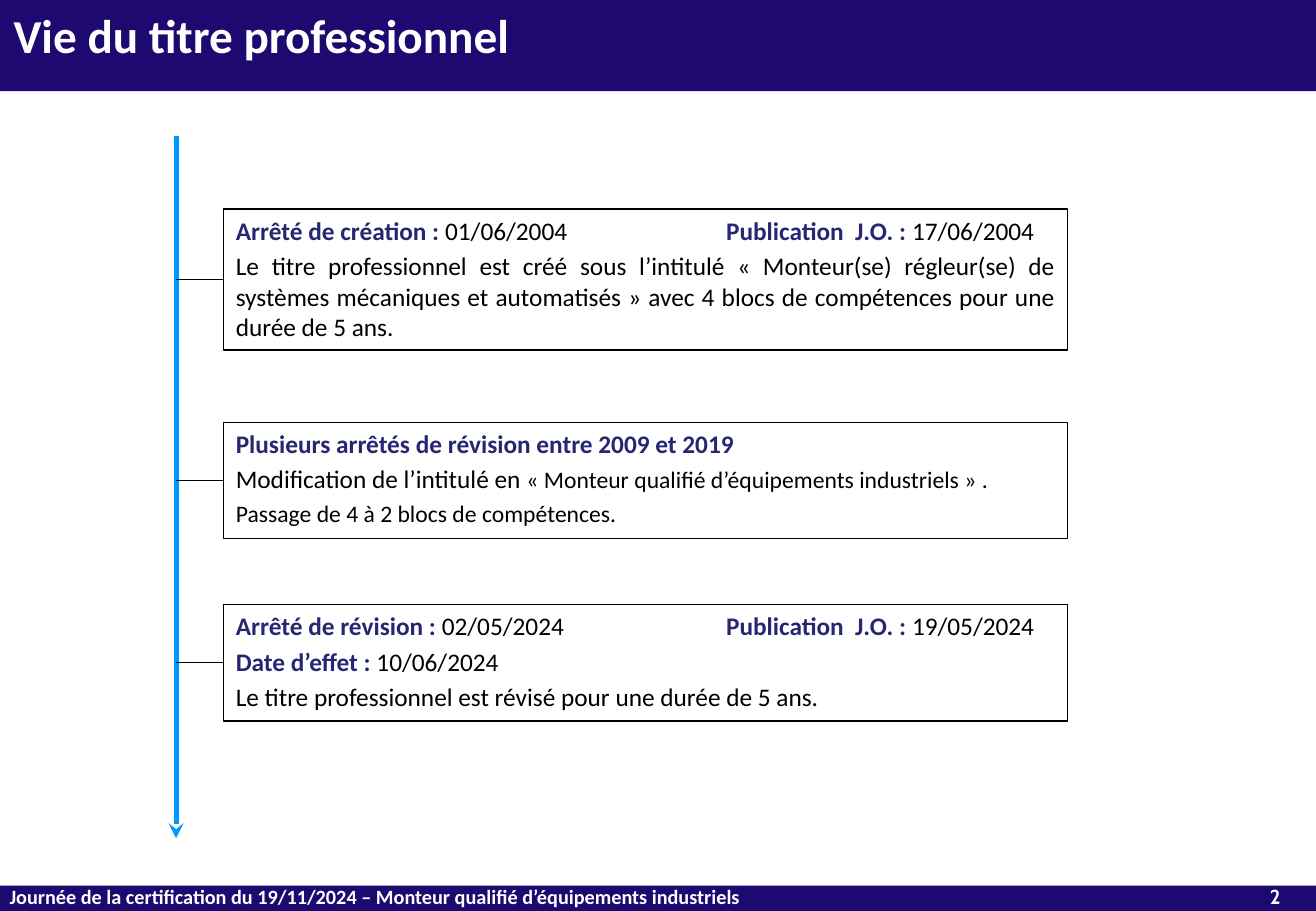
"""Builds the slide that tells the life of a professional title."""
from dataclasses import dataclass

from lxml import etree
from pptx import Presentation
from pptx.dml.color import RGBColor
from pptx.enum.shapes import MSO_CONNECTOR, MSO_SHAPE
from pptx.enum.text import MSO_ANCHOR, PP_ALIGN
from pptx.oxml.ns import qn
from pptx.shapes.autoshape import Shape
from pptx.slide import Slide
from pptx.text.text import TextFrame
from pptx.util import Cm, Pt

RECT = MSO_SHAPE.RECTANGLE
STRAIGHT = MSO_CONNECTOR.STRAIGHT
TOP = MSO_ANCHOR.TOP
LEFT, CENTER, JUSTIFY = PP_ALIGN.LEFT, PP_ALIGN.CENTER, PP_ALIGN.JUSTIFY


@dataclass(frozen=True)
class Theme:
    navy: str = "1D0970"
    label: str = "262673"
    axis: str = "0099FF"
    black: str = "000000"
    white: str = "FFFFFF"
    font: str = "Calibri"
    number: str = "Cabin"
    title: float = 28
    body: float = 15
    small: float = 14
    foot: float = 12


THEME = Theme()


@dataclass(frozen=True)
class Part:
    text: str
    color: str = THEME.black
    bold: bool = False
    size: float = THEME.body


@dataclass(frozen=True)
class Event:
    top: float
    height: float
    lines: list[list[Part]]


WIDTH, HEIGHT = 27.51, 19.05
BAND, FOOT = 1.91, 0.53
AXIS, BOX, SPAN, TAB = 3.68, 4.68, 17.63, 16.69


def label(text: str) -> Part:
    return Part(text, THEME.label, True)


def dates(name: str, signed: str, issued: str) -> list[Part]:
    return [label(f"{name} : "), Part(f"{signed}\t"),
            label("Publication  J.O. : "), Part(issued)]


EVENTS = [
    Event(4.37, 2.95, [
        dates("Arrêté de création", "01/06/2004", "17/06/2004"),
        [Part("Le titre professionnel est créé sous l’intitulé « Monteur(se) régleur(se) de "
              "systèmes mécaniques et automatisés » avec 4 blocs de compétences pour une "
              "durée de 5 ans.")],
    ]),
    Event(8.83, 2.44, [
        [label("Plusieurs arrêtés de révision entre 2009 et 2019")],
        [Part("Modification de l’intitulé en "),
         Part("« Monteur qualifié d’équipements industriels » .", size=THEME.small)],
        [Part("Passage de 4 à 2 blocs de compétences.", size=THEME.small)],
    ]),
    Event(12.64, 2.44, [
        dates("Arrêté de révision", "02/05/2024", "19/05/2024"),
        [label("Date d’effet : "), Part("10/06/2024")],
        [Part("Le titre professionnel est révisé pour une durée de 5 ans.")],
    ]),
]


def write(frame: TextFrame, lines: list[list[Part]], *, font: str = THEME.font,
          align: PP_ALIGN = LEFT, gap: float = 0, tab: float = 0) -> None:
    frame.word_wrap = True
    frame.vertical_anchor = TOP
    for row, parts in enumerate(lines):
        para = frame.add_paragraph() if row else frame.paragraphs[0]
        para.alignment = align
        para.space_before = Pt(gap if row else 0)
        for part in parts:
            run = para.add_run()
            run.text = part.text
            run.font.name = font
            run.font.size = Pt(part.size)
            run.font.bold = part.bold
            run.font.color.rgb = RGBColor.from_string(part.color)
        if tab:
            stops = etree.SubElement(para._p.get_or_add_pPr(), qn("a:tabLst"))
            etree.SubElement(stops, qn("a:tab"), pos=str(int(Cm(tab))), algn="r")


def add_rect(slide: Slide, left: float, top: float, width: float, height: float,
             fill: str = "", line: str = "") -> Shape:
    rect = slide.shapes.add_shape(RECT, Cm(left), Cm(top), Cm(width), Cm(height))
    rect.shadow.inherit = False
    if fill:
        rect.fill.solid()
        rect.fill.fore_color.rgb = RGBColor.from_string(fill)
    else:
        rect.fill.background()
    if line:
        rect.line.color.rgb = RGBColor.from_string(line)
        rect.line.width = Pt(0.75)
    else:
        rect.line.fill.background()
    return rect


def add_line(slide: Slide, start: tuple[float, float], end: tuple[float, float],
             color: str, width: float, arrow: bool = False) -> None:
    link = slide.shapes.add_connector(STRAIGHT, *map(Cm, start), *map(Cm, end))
    link.line.color.rgb = RGBColor.from_string(color)
    link.line.width = Pt(width)
    props = link.element.spPr
    if arrow:
        etree.SubElement(props.find(qn("a:ln")), qn("a:tailEnd"), type="stealth")
    etree.SubElement(props, qn("a:effectLst"))


def add_frame(slide: Slide) -> None:
    add_rect(slide, 0, 0, WIDTH, BAND, THEME.navy)
    add_rect(slide, 0, HEIGHT - FOOT, WIDTH, FOOT, THEME.navy)
    notes = [
        (-0.05, 26, "Journée de la certification du 19/11/2024 – "
         "Monteur qualifié d’équipements industriels", THEME.font, LEFT),
        (25.96, 1.4, "2", THEME.number, CENTER),
    ]
    for left, width, text, font, align in notes:
        box = slide.shapes.add_textbox(Cm(left), Cm(18.36), Cm(width), Cm(0.76))
        write(box.text_frame, [[Part(text, THEME.white, True, THEME.foot)]],
              font=font, align=align)


def add_title(slide: Slide) -> None:
    title = slide.shapes.title
    title.left, title.top, title.width, title.height = map(Cm, (0.03, 0, 23.39, 1.93))
    write(title.text_frame,
          [[Part("Vie du titre professionnel", THEME.white, True, THEME.title)]])
    title.element.getparent().append(title.element)


def add_event(slide: Slide, event: Event) -> None:
    box = add_rect(slide, BOX, event.top, SPAN, event.height, line=THEME.black)
    write(box.text_frame, event.lines, align=JUSTIFY, gap=3, tab=TAB)
    mid = event.top + event.height / 2
    add_line(slide, (BOX, mid), (AXIS, mid), THEME.black, 0.75)


def main() -> None:
    deck = Presentation()
    deck.slide_width, deck.slide_height = Cm(WIDTH), Cm(HEIGHT)
    slide = deck.slides.add_slide(deck.slide_layouts[5])
    add_frame(slide)
    add_title(slide)
    add_line(slide, (AXIS, 2.84), (AXIS, 17.53), THEME.axis, 3, arrow=True)
    for event in EVENTS:
        add_event(slide, event)
    deck.save("out.pptx")


if __name__ == "__main__":
    main()
